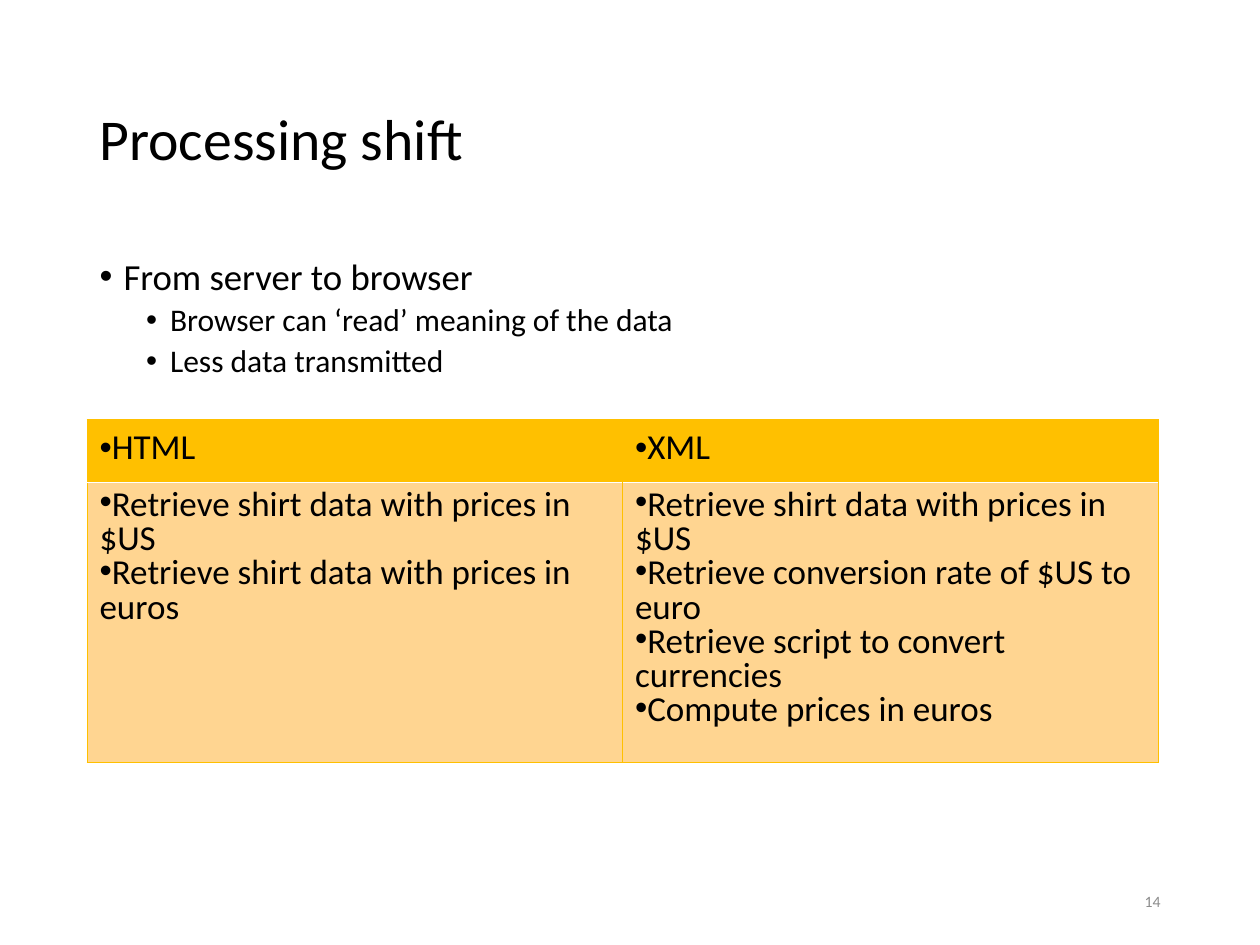
from dataclasses import dataclass

from lxml.etree import SubElement
from pptx import Presentation
from pptx.dml.color import RGBColor
from pptx.enum.text import MSO_ANCHOR, PP_ALIGN
from pptx.oxml.ns import qn
from pptx.util import Inches, Pt


@dataclass(frozen=True)
class Theme:
    font: str = "Calibri"
    ink: str = "000000"
    muted: str = "8C8C8C"
    gold: str = "FFC000"
    pale_gold: str = "FFD591"
    rule: str = "FFFFFF"
    title: float = 33
    level_sizes: tuple = (21, 18)
    level_gaps: tuple = (7.5, 3.8)
    table: float = 20
    number: float = 9


THEME = Theme()
LEFT, WIDTH = 0.69, 8.62  # shared text margins, inches
HANG = 0.19

OUTLINE = [
    (0, "From server to browser"),
    (1, "Browser can ‘read’ meaning of the data"),
    (1, "Less data transmitted"),
]
COMPARISON = {
    "HTML": [
        "Retrieve shirt data with prices in $US",
        "Retrieve shirt data with prices in euros",
    ],
    "XML": [
        "Retrieve shirt data with prices in $US",
        "Retrieve conversion rate of $US to euro",
        "Retrieve script to convert currencies",
        "Compute prices in euros",
    ],
}


def place(shape, left, top, width, height):
    shape.left, shape.top = Inches(left), Inches(top)
    shape.width, shape.height = Inches(width), Inches(height)


def write(paragraph, words, size, color=THEME.ink, spacing=None):
    run = paragraph.add_run()
    run.text = words
    run.font.name, run.font.size, run.font.bold = THEME.font, Pt(size), False
    run.font.color.rgb = RGBColor.from_string(color)
    if spacing:
        paragraph.line_spacing = spacing


def add_bullet(paragraph, margin=0, hang=0):
    """Call after the paragraph's spacing is set, as the XML is ordered."""
    props = paragraph._p.get_or_add_pPr()
    props.set("marL", str(Inches(margin)))
    props.set("indent", str(-Inches(hang)))
    SubElement(props, qn("a:buFont"), typeface="Arial")
    SubElement(props, qn("a:buChar"), char="•")


def paragraphs(frame, count):
    return [frame.paragraphs[0]] + [frame.add_paragraph() for _ in range(count - 1)]


def set_title(title, words):
    place(title, LEFT, 0.4, WIDTH, 1.45)
    title.text_frame.vertical_anchor = MSO_ANCHOR.MIDDLE
    heading = title.text_frame.paragraphs[0]
    heading.alignment = PP_ALIGN.LEFT
    write(heading, words, THEME.title, spacing=0.9)


def set_outline(body, points):
    place(body, LEFT, 2, WIDTH, 4.76)
    lines = paragraphs(body.text_frame, len(points))
    for line, (level, words) in zip(lines, points):
        line.level = level
        line.space_before = Pt(THEME.level_gaps[level])
        write(line, words, THEME.level_sizes[level], spacing=0.9)
        add_bullet(line, HANG + 0.37 * level, HANG)


def set_border(cell, side, color, points):
    props = cell._tc.get_or_add_tcPr()
    edge = SubElement(props, qn(f"a:ln{side}"), w=str(Pt(points)))
    if color is None:
        SubElement(edge, qn("a:noFill"))
    else:
        SubElement(SubElement(edge, qn("a:solidFill")), qn("a:srgbClr"), val=color)


def fill_cell(cell, entries, fill, borders, spacing=None):
    for side, (color, points) in borders.items():
        set_border(cell, side, color, points)
    cell.fill.solid()
    cell.fill.fore_color.rgb = RGBColor.from_string(fill)
    for line, words in zip(paragraphs(cell.text_frame, len(entries)), entries):
        write(line, words, THEME.table, spacing=spacing)
        add_bullet(line)


def add_comparison(slide, comparison):
    row_heights, column_width = (0.5, 2.22), 4.25
    count = len(comparison)
    table = slide.shapes.add_table(
        2, count, Inches(LEFT), Inches(3.33),
        Inches(column_width * count), Inches(sum(row_heights)),
    ).table
    table.first_row = table.horz_banding = False
    for row, height in zip(table.rows, row_heights):
        row.height = Inches(height)

    thin, none, divider = (THEME.gold, 0.5), (None, 0.5), (THEME.rule, 1)
    for index, (heading, steps) in enumerate(comparison.items()):
        table.columns[index].width = Inches(column_width)
        # Heading cells have no line between them
        heading_borders = {
            "L": thin if index == 0 else none,
            "R": thin if index == count - 1 else none,
            "T": thin,
            "B": divider,
        }
        step_borders = {"L": thin, "R": thin, "T": divider, "B": thin}
        fill_cell(table.cell(0, index), [heading], THEME.gold, heading_borders)
        fill_cell(table.cell(1, index), steps, THEME.pale_gold, step_borders, 0.8)


def add_page_number(slide, number):
    box = slide.shapes.add_textbox(Inches(7.06), Inches(6.95), Inches(2.25), Inches(0.4))
    box.text_frame.word_wrap = True
    box.text_frame.vertical_anchor = MSO_ANCHOR.MIDDLE
    line = box.text_frame.paragraphs[0]
    line.alignment = PP_ALIGN.RIGHT
    write(line, number, THEME.number, THEME.muted)


def main():
    deck = Presentation()
    deck.slide_width, deck.slide_height = Inches(10), Inches(7.5)
    slide = deck.slides.add_slide(deck.slide_layouts[1])

    # Title and outline
    set_title(slide.shapes.title, "Processing shift")
    set_outline(slide.placeholders[1], OUTLINE)

    # Comparison table and page number
    add_comparison(slide, COMPARISON)
    add_page_number(slide, "14")
    deck.save("out.pptx")


if __name__ == "__main__":
    main()
